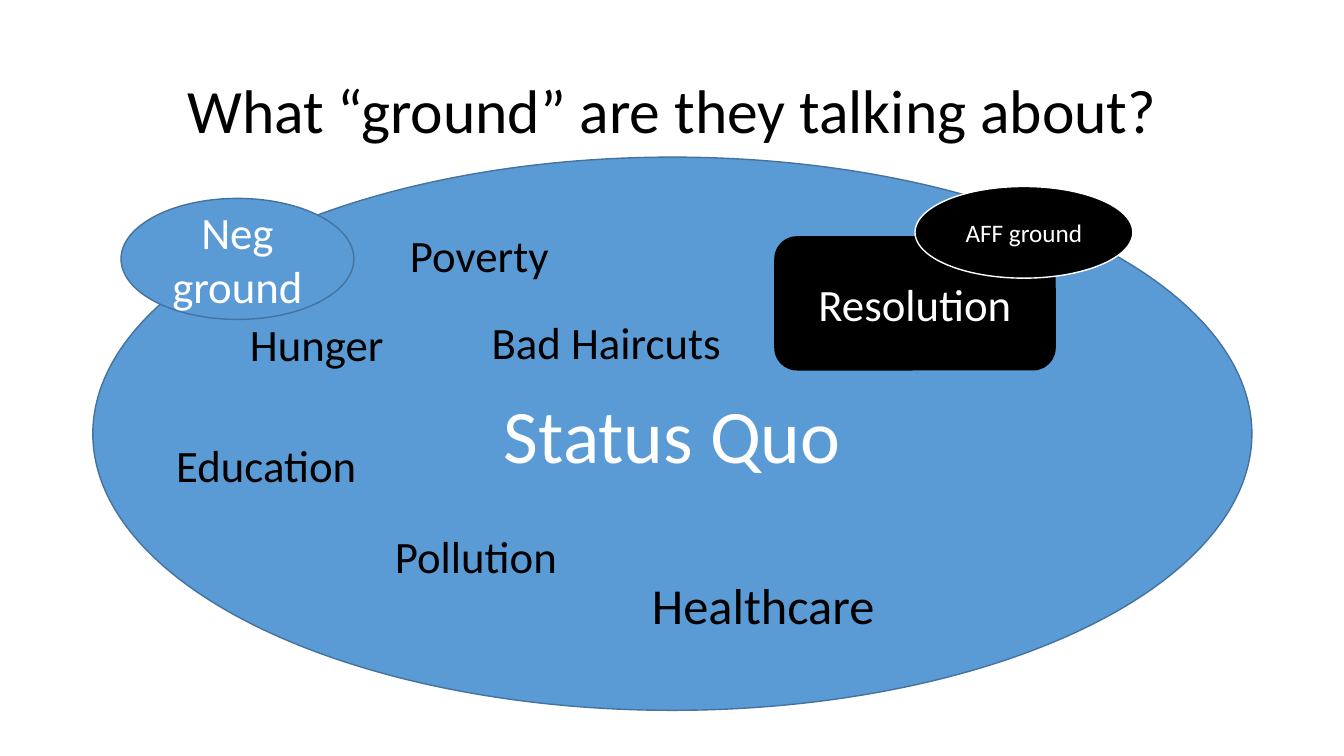
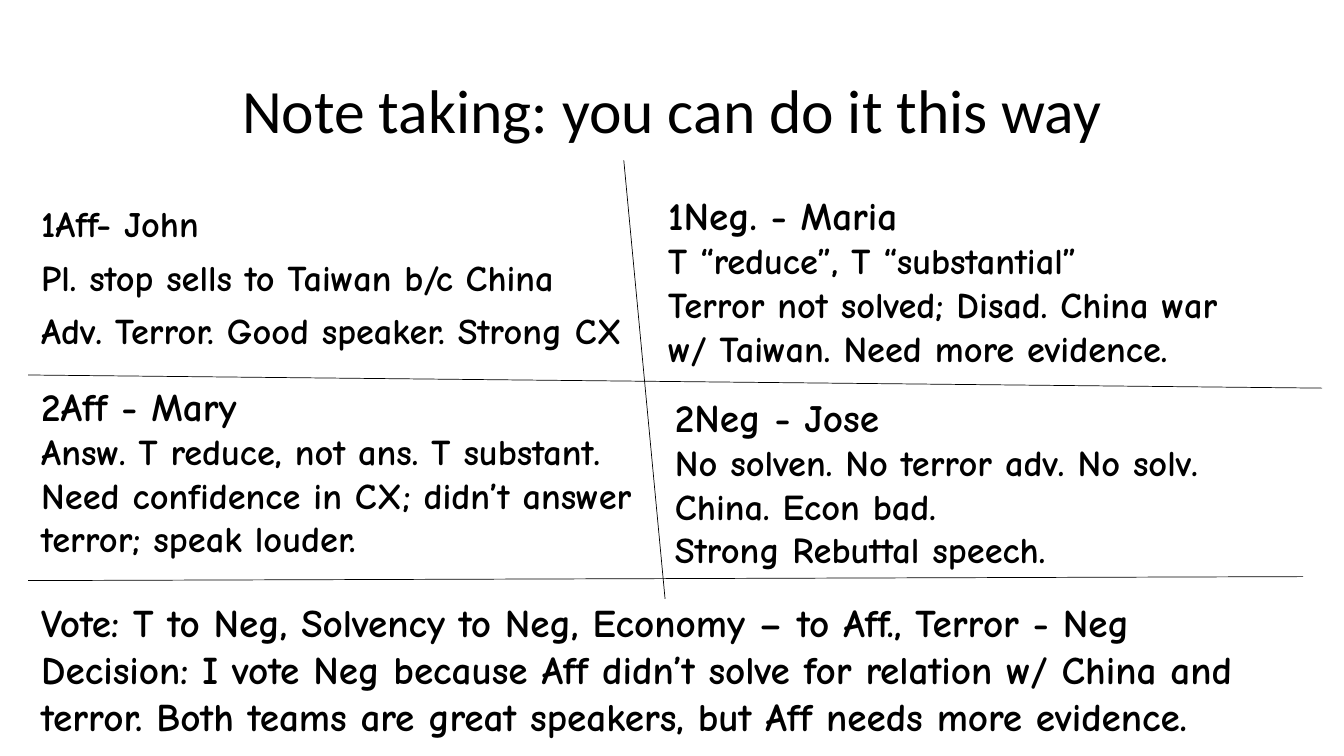
from dataclasses import dataclass

from lxml import etree
from pptx import Presentation
from pptx import util as u
from pptx.dml import color
from pptx.enum import shapes, text
from pptx.oxml import ns


# Theme: colours, fonts and type sizes
@dataclass(frozen=True)
class Theme:
    black: str = "000000"
    white: str = "FFFFFF"
    blue: str = "5B9BD5"
    blue_edge: str = "43739E"
    sans: str = "Calibri"
    hand: str = "Comic Neue"
    hero: float = 54
    title: float = 44
    large: float = 36
    label: float = 32
    note_head: float = 28
    note: float = 26
    small: float = 18


T = Theme()
CENTER, MIDDLE = text.PP_ALIGN.CENTER, text.MSO_ANCHOR.MIDDLE
ELLIPSE, ROUNDED = shapes.MSO_SHAPE.OVAL, shapes.MSO_SHAPE.ROUNDED_RECTANGLE


# Repeated elements, lengths in centimetres
@dataclass(frozen=True)
class Bubble:
    kind: shapes.MSO_SHAPE
    box: tuple
    words: str
    size: float
    fill: str
    edge: str


@dataclass(frozen=True)
class Label:
    box: tuple
    words: str
    size: float = T.label


@dataclass(frozen=True)
class Note:
    box: tuple
    lines: tuple
    head_size: float = T.note_head
    size: float = T.note
    line_spacing: float = 1.0
    space_before: float = 0


@dataclass(frozen=True)
class Rule:
    start: tuple
    end: tuple


BUBBLES = (
    Bubble(ELLIPSE, (2.34, 3.96, 29.21, 13.94), "Status Quo", T.hero, T.blue, T.blue_edge),
    Bubble(ROUNDED, (19.53, 5.97, 7.06, 3.35), "Resolution", T.label, T.black, T.black),
    Bubble(ELLIPSE, (3.05, 5, 5.87, 3.05), "Neg ground", T.label, T.blue, T.blue_edge),
    Bubble(ELLIPSE, (23.06, 4.7, 5.49, 2.31), "AFF ground", T.small, T.black, T.white),
)
LABELS = (
    Label((6.05, 7.85, 3.91, 1.63), "Hunger"),
    Label((10.08, 5.61, 4.75, 1.63), "Poverty"),
    Label((9.7, 13.21, 5.89, 1.63), "Pollution"),
    Label((16.18, 14.35, 8.56, 1.8), "Healthcare", T.large),
    Label((4.19, 10.9, 6.68, 1.63), "Education"),
    Label((12.14, 7.8, 7.39, 1.63), "Bad Haircuts"),
)
NOTES = (
    Note((0.79, 5.08, 15.72, 4.37),
         ("1Aff- John", "Pl. stop sells to Taiwan b/c China",
          "Adv. Terror. Good speaker. Strong CX"),
         head_size=25.9, size=25.9, line_spacing=0.9, space_before=10),
    Note((0.79, 9.5, 16.51, 4.78),
         ("2Aff - Mary", "Answ. T reduce, not ans. T substant.",
          "Need confidence in CX; didn’t answer terror; speak louder.")),
    Note((16.59, 4.7, 14.96, 4.78),
         ("1Neg. - Maria", "T “reduce”, T “substantial”",
          "Terror not solved; Disad. China war w/ Taiwan. Need more evidence.")),
    Note((16.76, 9.78, 15.7, 4.78),
         ("2Neg - Jose", "No solven. No terror adv. No solv. China. Econ bad.",
          "Strong Rebuttal speech.")),
    Note((0.79, 14.94, 31.67, 3.84),
         ("Vote: T to Neg, Solvency to Neg, Economy – to Aff., Terror - Neg",
          "Decision: I vote Neg because Aff didn’t solve for relation w/ China and "
          "terror. Both teams are great speakers, but Aff needs more evidence."),
         size=T.note_head),
)
RULES = (
    Rule((15.72, 4.04), (16.76, 15.09)),
    Rule((0.71, 9.45), (33.32, 9.78)),
    Rule((0.71, 14.63), (32.84, 14.53)),
)


# Drawing helpers
def cm(values: tuple) -> list:
    return [u.Cm(v) for v in values]


def apply(target, formats: dict) -> None:
    for name, value in formats.items():
        setattr(target, name, value)


def write(p, words: str, size: float, ink: str, font: str, bold: bool = False) -> None:
    r = p.add_run()
    r.text = words
    apply(r.font, {"name": font, "size": u.Pt(size), "bold": bold})
    r.font.color.rgb = color.RGBColor.from_string(ink)


def add_text_frame(s, box: tuple, anchor=text.MSO_ANCHOR.TOP):
    tf = s.shapes.add_textbox(*cm(box)).text_frame
    apply(tf, {"word_wrap": True, "vertical_anchor": anchor})
    return tf


def add_titled_slide(prs, title: str):
    s = prs.slides.add_slide(prs.slide_layouts[6])
    p = add_text_frame(s, (2.34, 1.02, 29.21, 3.68), MIDDLE).paragraphs[0]
    apply(p, {"alignment": CENTER, "line_spacing": 0.9})
    write(p, title, T.title, T.black, T.sans)
    return s


def add_bubble(s, bubble: Bubble) -> None:
    sp = s.shapes.add_shape(bubble.kind, *cm(bubble.box))
    sp.shadow.inherit = False
    sp.fill.solid()
    sp.fill.fore_color.rgb = color.RGBColor.from_string(bubble.fill)
    sp.line.color.rgb = color.RGBColor.from_string(bubble.edge)
    sp.line.width = u.Pt(1)
    tf = sp.text_frame
    apply(tf, {"word_wrap": True, "vertical_anchor": MIDDLE})
    p = tf.paragraphs[0]
    p.alignment = CENTER
    write(p, bubble.words, bubble.size, T.white, T.sans)


def add_label(s, label: Label) -> None:
    p = add_text_frame(s, label.box).paragraphs[0]
    write(p, label.words, label.size, T.black, T.sans)


def add_note(s, note: Note) -> None:
    tf = add_text_frame(s, note.box)
    for i, line in enumerate(note.lines):
        p = tf.add_paragraph() if i else tf.paragraphs[0]
        apply(p, {"line_spacing": note.line_spacing,
                  "space_before": u.Pt(note.space_before)})
        write(p, line, note.size if i else note.head_size, T.black, T.hand, bold=True)


def add_rule(s, rule: Rule) -> None:
    line = s.shapes.add_connector(shapes.MSO_CONNECTOR.STRAIGHT,
                                  *cm(rule.start + rule.end))
    line.line.color.rgb = color.RGBColor.from_string(T.black)
    line.line.width = u.Pt(0.5)
    etree.SubElement(line._element.spPr, ns.qn("a:effectLst"))


def main() -> None:
    prs = Presentation()
    apply(prs, {"slide_width": u.Cm(33.87), "slide_height": u.Cm(19.05)})

    # Ground map: later bubbles overlap the status quo
    s = add_titled_slide(prs, "What “ground” are they talking about?")
    for bubble in BUBBLES:
        add_bubble(s, bubble)
    for label in LABELS:
        add_label(s, label)

    # Note sheet: four speakers, a verdict and the dividing rules
    s = add_titled_slide(prs, "Note taking: you can do it this way")
    for note in NOTES:
        add_note(s, note)
    for rule in RULES:
        add_rule(s, rule)

    prs.save("out.pptx")


if __name__ == "__main__":
    main()
